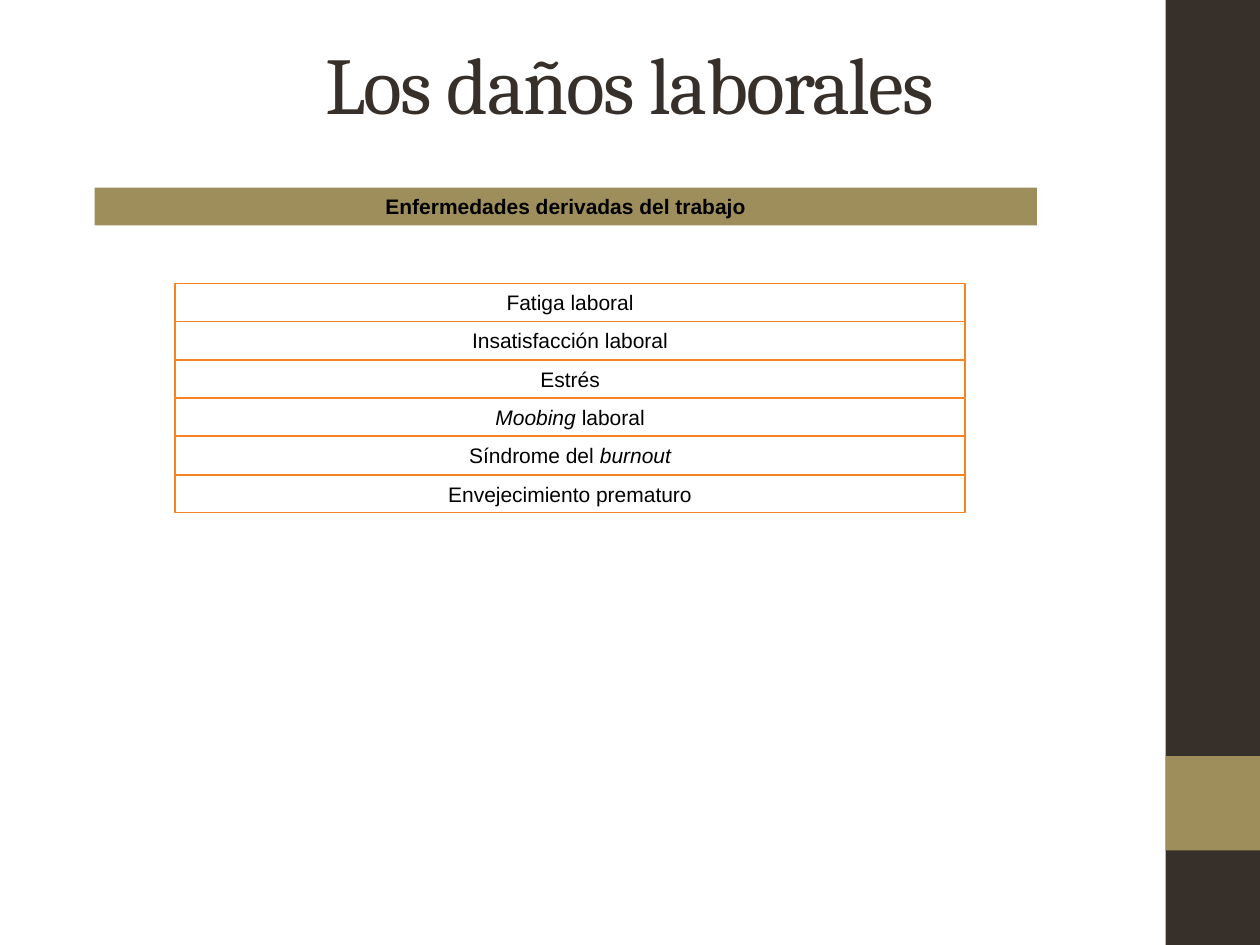
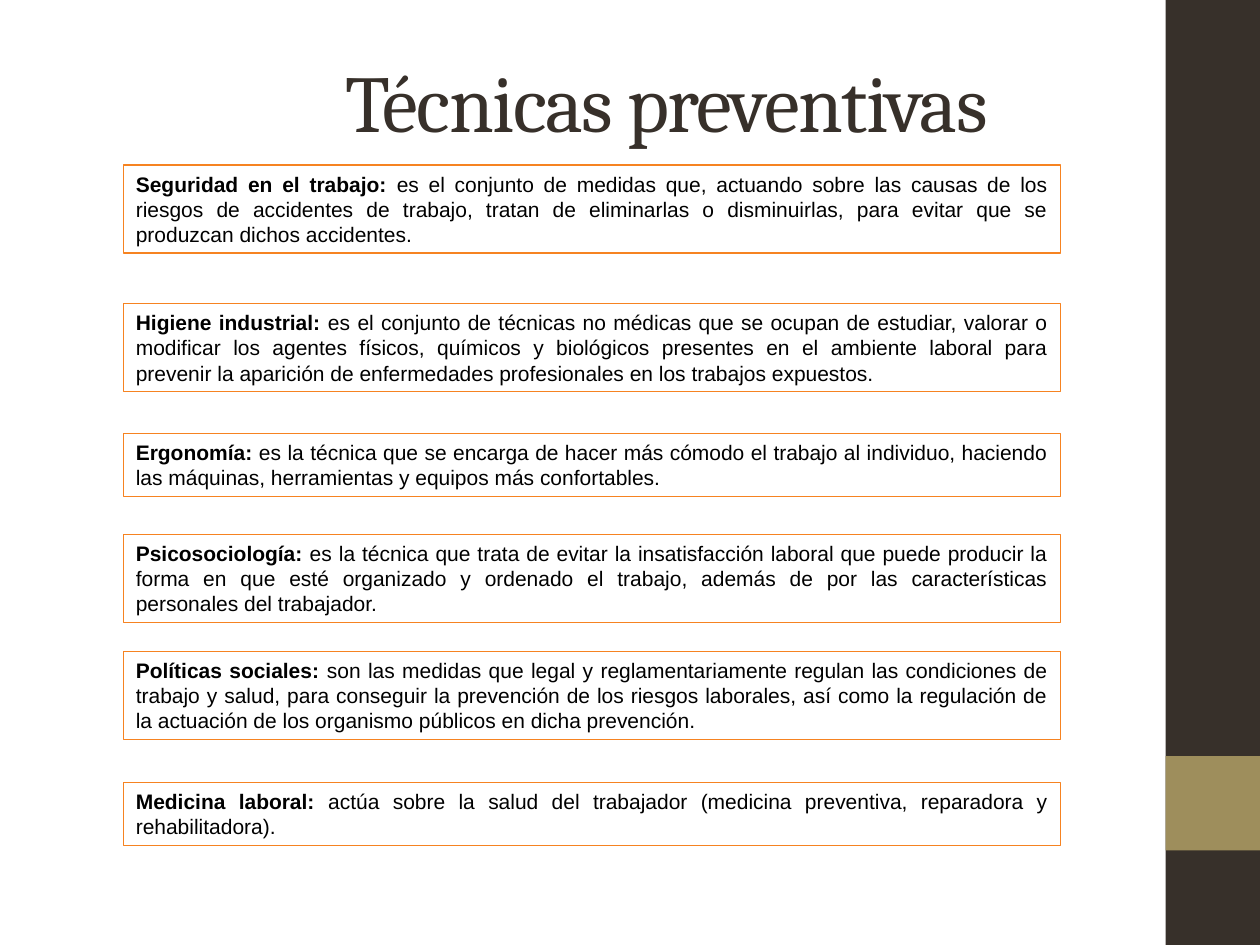
import pptx
import pptx.util
import pptx.dml.color
import pptx.enum.shapes
import pptx.enum.text
import pptx.oxml.ns

Inches = pptx.util.Inches
ALIGN = pptx.enum.text.PP_ALIGN
ANCHOR = pptx.enum.text.MSO_ANCHOR

COLORS = {
    "dark": "37302A",
    "gold": "9E8E5C",
    "edge": "F68321",
    "ink": "000000",
}
BODY = {"name": "Arial", "size": pptx.util.Pt(12)}
HEAD = {"name": "Cambria", "size": pptx.util.Pt(46)}
BOLD = {"bold": True}
SLANT = {"italic": True}

HARMS = [
    [("Fatiga laboral", {})],
    [("Insatisfacción laboral", {})],
    [("Estrés", {})],
    [("Moobing", SLANT), (" laboral", {})],
    [("Síndrome del ", {}), ("burnout", SLANT)],
    [("Envejecimiento prematuro", {})],
]

# top, height, term, meaning
METHODS = [
    (1.31, 0.7, "Seguridad en el trabajo: ",
     "es el conjunto de medidas que, actuando sobre las causas de los riesgos "
     "de accidentes de trabajo, tratan de eliminarlas o disminuirlas, para "
     "evitar que se produzcan dichos accidentes."),
    (2.41, 0.7, "Higiene industrial: ",
     "es el conjunto de técnicas no médicas que se ocupan de estudiar, valorar "
     "o modificar los agentes físicos, químicos y biológicos presentes en el "
     "ambiente laboral para prevenir la aparición de enfermedades "
     "profesionales en los trabajos expuestos."),
    (3.44, 0.5, "Ergonomía: ",
     "es la técnica que se encarga de hacer más cómodo el trabajo al "
     "individuo, haciendo las máquinas, herramientas y equipos más "
     "confortables."),
    (4.24, 0.7, "Psicosociología: ",
     "es la técnica que trata de evitar la insatisfacción laboral que puede "
     "producir la forma en que esté organizado y ordenado el trabajo, además "
     "de por las características personales del trabajador."),
    (5.17, 0.7, "Políticas sociales: ",
     "son las medidas que legal y reglamentariamente regulan las condiciones "
     "de trabajo y salud, para conseguir la prevención de los riesgos "
     "laborales, así como la regulación de la actuación de los organismo "
     "públicos en dicha prevención."),
    (6.21, 0.5, "Medicina laboral:",
     " actúa sobre la salud del trabajador (medicina preventiva, reparadora y "
     "rehabilitadora)."),
]


def color(name):
    return pptx.dml.color.RGBColor.from_string(COLORS[name])


def write(shape, parts, base, ink, align, anchor):
    """Fill a shape with one paragraph of (text, format) parts."""
    frame = shape.text_frame
    frame.word_wrap = True
    frame.auto_size = pptx.enum.text.MSO_AUTO_SIZE.NONE
    frame.vertical_anchor = anchor
    para = frame.paragraphs[0]
    para.alignment = align
    for text, extra in parts:
        run = para.add_run()
        run.text = text
        run.font.color.rgb = color(ink)
        for key, value in {**base, **extra}.items():
            setattr(run.font, key, value)


def add_box(slide, box, fill=None, edge=None):
    shape = slide.shapes.add_shape(
        pptx.enum.shapes.MSO_SHAPE.RECTANGLE, *map(Inches, box))
    shape.shadow.inherit = False
    if fill:
        shape.fill.solid()
        shape.fill.fore_color.rgb = color(fill)
    else:
        shape.fill.background()
    if edge:
        shape.line.color.rgb = color(edge)
        shape.line.width = pptx.util.Pt(0.75)
    else:
        shape.line.fill.background()
    return shape


def add_side(slide, box):
    """Draw the side band and move it to the layout, behind its placeholders."""
    left, top, width, height = box
    band = add_box(slide, box, fill="dark")
    block = add_box(slide, (left, top + height * 0.8, width, width), fill="gold")
    tree = slide.slide_layout.shapes.element
    for index, shape in enumerate((band, block), 2):
        tree.insert(index, shape.element)


def set_title(slide, text, box, align):
    title = slide.shapes.title
    title.left, title.top, title.width, title.height = map(Inches, box)
    write(title, [(text, {})], HEAD, "dark", align, ANCHOR.TOP)
    for props in title.element.iter(pptx.oxml.ns.qn("a:rPr")):
        props.set("spc", "-90")


def add_banner(slide, text, box):
    shape = add_box(slide, box, fill="gold")
    write(shape, [(text, BOLD)], BODY, "ink", ALIGN.CENTER, ANCHOR.MIDDLE)


def add_rows(slide, rows, box):
    """Stack rows 0.3 high so that they span the box."""
    left, top, width, height = box
    tall = 0.3
    step = (height - tall) / (len(rows) - 1)
    for index, parts in enumerate(rows):
        shape = add_box(slide, (left, top + index * step, width, tall), edge="edge")
        write(shape, parts, BODY, "ink", ALIGN.CENTER, ANCHOR.TOP)


def add_cards(slide, cards, left, width):
    for top, height, term, meaning in cards:
        shape = add_box(slide, (left, top, width, height), edge="edge")
        write(shape, [(term, BOLD), (meaning, {})], BODY, "ink",
              ALIGN.JUSTIFY, ANCHOR.TOP)


def make_harms(slide):
    set_title(slide, "Los daños laborales", (2.48, 0.22, 6.26, 0.39), ALIGN.LEFT)
    add_rows(slide, HARMS, (1.39, 2.25, 6.27, 1.82))
    add_banner(slide, "Enfermedades derivadas del trabajo",
               (0.75, 1.49, 7.48, 0.3))


def make_methods(slide):
    set_title(slide, "Técnicas preventivas", (2.16, 0.36, 6.26, 0.39), ALIGN.CENTER)
    add_cards(slide, METHODS, 0.98, 7.44)


def main():
    deck = pptx.Presentation()
    deck.slide_width, deck.slide_height = Inches(10), Inches(7.5)
    layout = deck.slide_layouts.get_by_name("Title Only")
    first, second = (deck.slides.add_slide(layout) for _ in range(2))
    add_side(first, (9.25, 0, 0.75, 7.5))
    make_harms(first)
    make_methods(second)
    deck.save("out.pptx")


if __name__ == "__main__":
    main()
